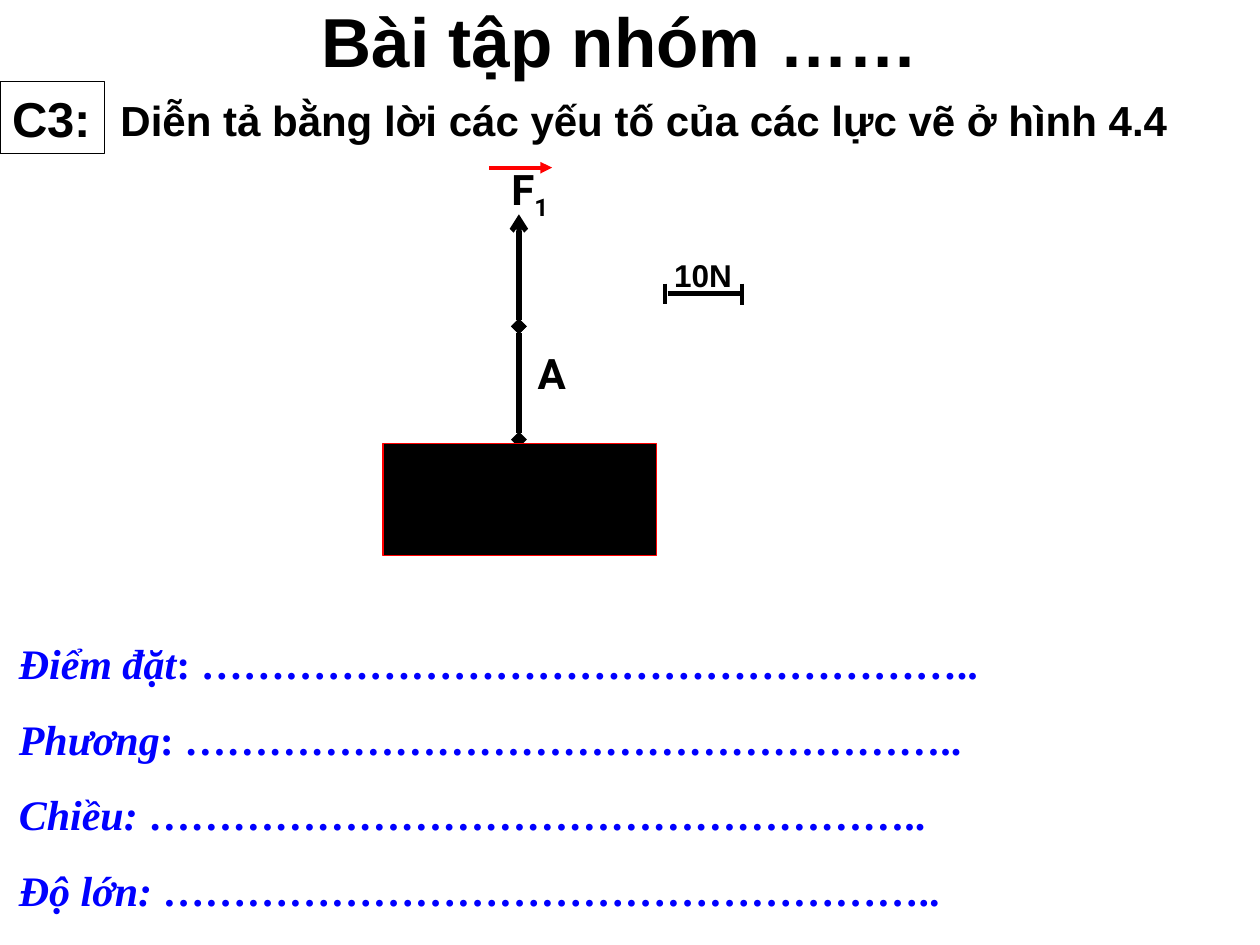
from lxml import etree
from pptx import Presentation
from pptx.dml import color
from pptx.enum import shapes, text
from pptx.oxml import ns
from pptx.util import Cm, Pt


def rgb(value):
    return color.RGBColor.from_string(value)


def style(p, size, name="Arial", value="000000"):
    p.font.size = Pt(size)
    p.font.name = name
    p.font.bold = True
    p.font.color.rgb = rgb(value)


prs = Presentation()
prs.slide_width = Cm(25.4)
prs.slide_height = Cm(19.05)
s = prs.slides.add_slide(prs.slide_layouts[6])

rects = [
    ((0, -0.03, 25.4, 1.68), "FFFFFF", None, "Bài tập nhóm …… ", 39.6, text.PP_ALIGN.CENTER, text.MSO_ANCHOR.MIDDLE),
    ((0, 1.65, 2.11, 1.45), "FFFFFF", "000000", "C3:", 28, text.PP_ALIGN.LEFT, text.MSO_ANCHOR.TOP),
    ((7.72, 8.94, 5.51, 2.26), "000000", "FF0000", "", 18, text.PP_ALIGN.LEFT, text.MSO_ANCHOR.TOP),
    ((13.34, 5.03, 2.34, 1.02), "FFFFFF", "FFFFFF", "10N", 18, text.PP_ALIGN.LEFT, text.MSO_ANCHOR.TOP),
]
lines = [
    ((10.46, 4.32, 10.46, 6.58), "000000", 3, "arrow", "diamond"),
    ((10.46, 6.58, 10.46, 8.86), "000000", 3, "diamond", "diamond"),
    ((9.86, 3.38, 11.13, 3.38), "FF0000", 2.25, None, "triangle"),
    ((13.46, 5.92, 14.94, 5.92), "000000", 3, None, None),
    ((14.96, 5.72, 14.96, 6.15), "000000", 2.25, None, None),
    ((13.41, 5.72, 13.41, 6.12), "000000", 2.25, None, None),
]
labels = [
    ((2.18, 1.78, 23.22, 1.27), "Diễn tả bằng lời các yếu tố của các lực vẽ ở hình 4.4", "", "Arial", text.PP_ALIGN.JUSTIFY),
    ((10.59, 6.88, 3.96, 2.26), "A", "", "Roboto", text.PP_ALIGN.LEFT),
    ((10.06, 3.18, 1.37, 1.3), "F", "1", "Roboto", text.PP_ALIGN.LEFT),
]
dots = "……………………………………………….."
answers = [("Điểm đặt", ": "), ("Phương", ": "), ("Chiều:", " "), ("Độ lớn: ", "")]

for ends, line_color, width, head, tail in lines[:2]:
    pass_ends = [Cm(v) for v in ends]
    break

connectors = []
for ends, line_color, width, head, tail in lines:
    sp = s.shapes.add_connector(shapes.MSO_CONNECTOR.STRAIGHT, *[Cm(v) for v in ends])
    sp.line.color.rgb = rgb(line_color)
    sp.line.width = Pt(width)
    ln = sp.line._get_or_add_ln()
    for tag, kind in (("a:headEnd", head), ("a:tailEnd", tail)):
        if kind:
            etree.SubElement(ln, ns.qn(tag), type=kind)
    etree.SubElement(sp._element.spPr, ns.qn("a:effectLst"))
    connectors.append(sp)

for bounds, fill, line_color, words, size, align, anchor in rects:
    sp = s.shapes.add_shape(shapes.MSO_SHAPE.RECTANGLE, *[Cm(v) for v in bounds])
    sp.shadow.inherit = False
    sp.fill.solid()
    sp.fill.fore_color.rgb = rgb(fill)
    if line_color:
        sp.line.color.rgb = rgb(line_color)
        sp.line.width = Pt(0.75)
    else:
        sp.line.fill.background()
    tf = sp.text_frame
    tf.vertical_anchor = anchor
    p = tf.paragraphs[0]
    p.alignment = align
    if words:
        p.add_run().text = words
        style(p, size)

for sp in connectors[3:]:
    s.shapes._spTree.append(sp._element)

for bounds, words, subscript, name, align in labels:
    tf = s.shapes.add_textbox(*[Cm(v) for v in bounds]).text_frame
    tf.word_wrap = True
    p = tf.paragraphs[0]
    p.alignment = align
    style(p, 24, name)
    p.add_run().text = words
    if subscript:
        r = p.add_run()
        r.text = subscript
        r.font._element.set("baseline", "-25000")

tf = s.shapes.add_textbox(Cm(0.13), Cm(12.22), Cm(24.64), Cm(6.4)).text_frame
tf.word_wrap = True
for i, (term, gap) in enumerate(answers):
    p = tf.add_paragraph() if i else tf.paragraphs[0]
    p.line_spacing = 1.5
    style(p, 24, "Times New Roman", "0000FF")
    r = p.add_run()
    r.text = term
    r.font.italic = True
    p.add_run().text = gap + dots

prs.save("out.pptx")
